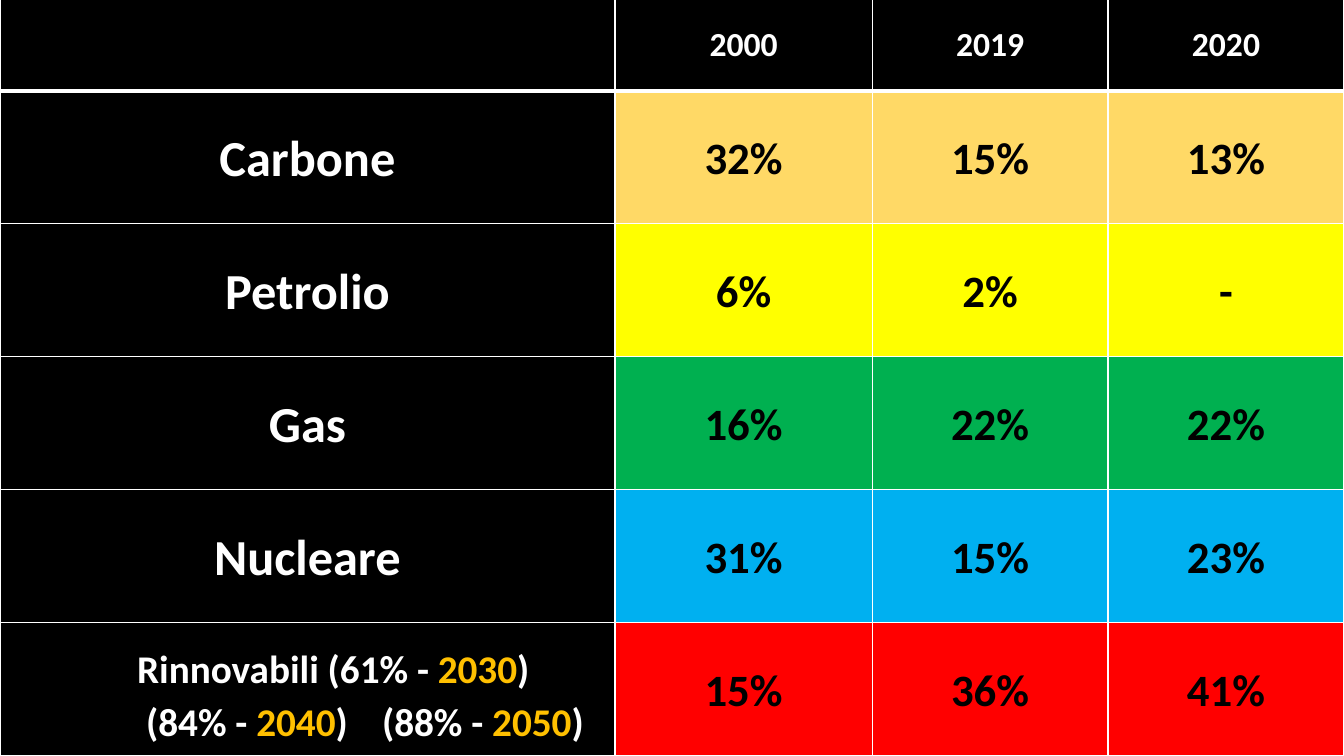
from dataclasses import dataclass

from lxml import etree
from pptx import Presentation
from pptx.dml.color import RGBColor
from pptx.enum.text import MSO_ANCHOR, PP_ALIGN
from pptx.oxml.ns import qn
from pptx.util import Inches, Pt

CENTER = PP_ALIGN.CENTER
LEFT = PP_ALIGN.LEFT
MIDDLE = MSO_ANCHOR.MIDDLE

BLACK = RGBColor(0x00, 0x00, 0x00)
WHITE = RGBColor(0xFF, 0xFF, 0xFF)
SAND = RGBColor(0xFF, 0xD9, 0x66)
YELLOW = RGBColor(0xFF, 0xFF, 0x00)
GREEN = RGBColor(0x00, 0xB0, 0x50)
BLUE = RGBColor(0x00, 0xB0, 0xF0)
RED = RGBColor(0xFF, 0x00, 0x00)
AMBER = RGBColor(0xFF, 0xC0, 0x00)

FONT = "Calibri"
COLUMN_WIDTHS = (6.1, 2.55, 2.34, 2.34)
HEADER_HEIGHT = 0.94
ROW_HEIGHT = 1.32
YEARS = ("2000", "2019", "2020")


@dataclass(frozen=True)
class Source:
    name: str
    shares: tuple[str, ...]
    color: RGBColor


@dataclass(frozen=True)
class Span:
    text: str
    color: RGBColor = WHITE


SOURCES = (
    Source("Carbone", ("32%", "15%", "13%"), SAND),
    Source("Petrolio", ("6%", "2%", "-"), YELLOW),
    Source("Gas", ("16%", "22%", "22%"), GREEN),
    Source("Nucleare", ("31%", "15%", "23%"), BLUE),
    Source("", ("15%", "36%", "41%"), RED),
)
RENEWABLES = (
    (Span("Rinnovabili (61% - "), Span("2030", AMBER), Span(")")),
    (Span("\t(84% - "), Span("2040", AMBER), Span(")\t(88% - "),
     Span("2050", AMBER), Span(")")),
)
RENEWABLES_TABS = (0.09, 2.43)


def add_borders(cell, top: float, bottom: float) -> None:
    properties = cell._tc.get_or_add_tcPr()
    for side, points in (("L", 1), ("R", 1), ("T", top), ("B", bottom)):
        line = etree.SubElement(properties, qn(f"a:ln{side}"), w=str(Pt(points)))
        fill = etree.SubElement(line, qn("a:solidFill"))
        etree.SubElement(fill, qn("a:srgbClr"), val=str(WHITE))


def style_paragraph(para, align) -> None:
    para.alignment = align
    para.line_spacing = 1.07
    para.space_after = Pt(1.2)


def style_run(run, size: float, color: RGBColor) -> None:
    run.font.name = FONT
    run.font.size = Pt(size)
    run.font.bold = True
    run.font.color.rgb = color


def fill_cell(cell, text: str, size: float, color: RGBColor, fill: RGBColor) -> None:
    cell.fill.solid()
    cell.fill.fore_color.rgb = fill
    cell.vertical_anchor = MIDDLE
    cell.margin_left = cell.margin_right = Inches(0.07)
    cell.margin_top = cell.margin_bottom = 0
    cell.text_frame.text = text
    para = cell.text_frame.paragraphs[0]
    style_paragraph(para, CENTER)
    for run in para.runs:
        style_run(run, size, color)


def write_renewables(cell) -> None:
    """Write the two-line label, with its forecast years highlighted."""
    cell.margin_left = Inches(1.36)
    cell.margin_top = Inches(0.12)
    frame = cell.text_frame
    frame.add_paragraph()
    for para, spans in zip(frame.paragraphs, RENEWABLES):
        style_paragraph(para, LEFT)
        tabs = etree.SubElement(para._p.get_or_add_pPr(), qn("a:tabLst"))
        for position in RENEWABLES_TABS:
            etree.SubElement(tabs, qn("a:tab"), pos=str(Inches(position)), algn="l")
        for span in spans:
            run = para.add_run()
            run.text = span.text
            style_run(run, 28, span.color)


def add_energy_table(page) -> None:
    row_heights = (HEADER_HEIGHT,) + (ROW_HEIGHT,) * len(SOURCES)
    table = page.shapes.add_table(
        len(row_heights), len(COLUMN_WIDTHS), 0, Inches(-0.04),
        Inches(sum(COLUMN_WIDTHS)), Inches(sum(row_heights))).table
    for column, width in zip(table.columns, COLUMN_WIDTHS):
        column.width = Inches(width)
    for index, height in enumerate(row_heights):
        row = table.rows[index]
        row.height = Inches(height)
        for cell in row.cells:
            add_borders(cell, 3 if index == 1 else 1, 3 if index == 0 else 1)

    for column, year in enumerate(("",) + YEARS):
        fill_cell(table.cell(0, column), year, 24, WHITE, BLACK)
    for index, source in enumerate(SOURCES, 1):
        fill_cell(table.cell(index, 0), source.name, 36, WHITE, BLACK)
        for column, share in enumerate(source.shares, 1):
            fill_cell(table.cell(index, column), share, 32, BLACK, source.color)
    write_renewables(table.cell(len(SOURCES), 0))


def main() -> None:
    deck = Presentation()
    deck.slide_width = Inches(13.33)
    deck.slide_height = Inches(7.5)
    page = deck.slides.add_slide(deck.slide_layouts[6])
    add_energy_table(page)
    deck.save("out.pptx")


if __name__ == "__main__":
    main()
